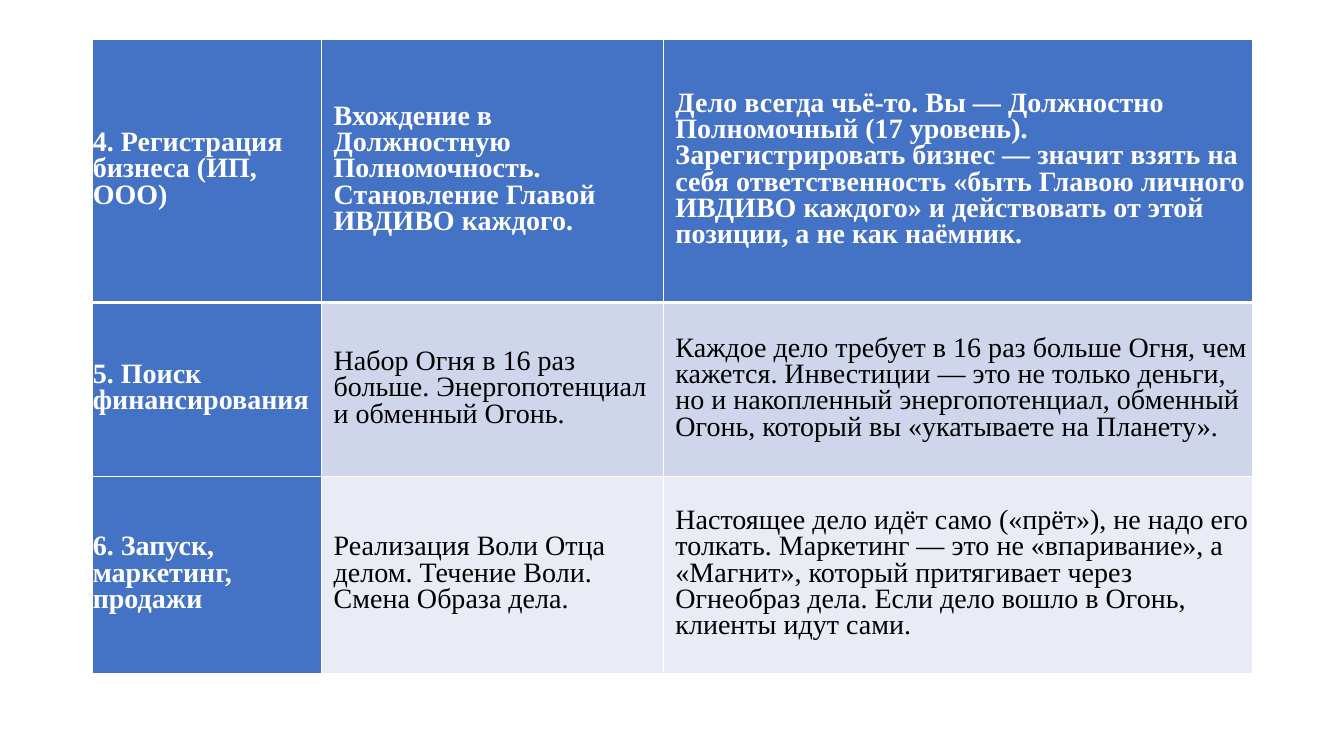
from lxml import etree
from pptx import Presentation
from pptx.dml.color import RGBColor
from pptx.enum.text import MSO_ANCHOR
from pptx.oxml.ns import qn
from pptx.util import Inches, Pt

MIDDLE = MSO_ANCHOR.MIDDLE
BLUE, WHITE, BLACK = "4472C4", "FFFFFF", "000000"
ROW_FILLS = [BLUE, "CFD5EA", "E9EBF5"]
COLUMN_WIDTHS = [2.27, 3.39, 5.84]
ROW_HEIGHTS = [2.61, 1.73, 1.95]

STAGES = [
    ["4. Регистрация бизнеса (ИП, ООО)",
     "Вхождение в Должностную Полномочность. Становление Главой ИВДИВО каждого.",
     "Дело всегда чьё-то. Вы — Должностно Полномочный (17 уровень). "
     "Зарегистрировать бизнес — значит взять на себя ответственность «быть Главою "
     "личного ИВДИВО каждого» и действовать от этой позиции, а не как наёмник."],
    ["5. Поиск финансирования",
     "Набор Огня в 16 раз больше. Энергопотенциал и обменный Огонь.",
     "Каждое дело требует в 16 раз больше Огня, чем кажется. Инвестиции — это не "
     "только деньги, но и накопленный энергопотенциал, обменный Огонь, который вы "
     "«укатываете на Планету»."],
    ["6. Запуск, маркетинг, продажи",
     "Реализация Воли Отца делом. Течение Воли. Смена Образа дела.",
     "Настоящее дело идёт само («прёт»), не надо его толкать. Маркетинг — это не "
     "«впаривание», а «Магнит», который притягивает через Огнеобраз дела. Если дело "
     "вошло в Огонь, клиенты идут сами."],
]


def color(value):
    return RGBColor.from_string(value)


def add_border(cell, side, points):
    line = etree.SubElement(cell._tc.get_or_add_tcPr(), qn(f"a:ln{side}"), w=str(Pt(points)))
    fill = etree.SubElement(line, qn("a:solidFill"))
    etree.SubElement(fill, qn("a:srgbClr"), val=WHITE)


prs = Presentation()
prs.slide_width, prs.slide_height = Inches(13.33), Inches(7.5)
slide = prs.slides.add_slide(prs.slide_layouts[6])

# Table of business stages
stages = slide.shapes.add_table(
    len(ROW_HEIGHTS), len(COLUMN_WIDTHS), Inches(0.92), Inches(0.39),
    Inches(sum(COLUMN_WIDTHS)), Inches(sum(ROW_HEIGHTS))).table
for column, width in zip(stages.columns, COLUMN_WIDTHS):
    column.width = Inches(width)
for row, height in zip(stages.rows, ROW_HEIGHTS):
    row.height = Inches(height)

# Cells: the first row and first column are emphasised
for r, texts in enumerate(STAGES):
    for c, text in enumerate(texts):
        cell = stages.cell(r, c)
        emphasised = r == 0 or c == 0
        cell_format = {
            "vertical_anchor": MIDDLE,
            "margin_left": Inches(0 if c == 0 else 0.12),
            "margin_right": Inches(0 if c == 2 else 0.12),
            "margin_top": Inches(0.07),
            "margin_bottom": Inches(0.07),
        }
        for name, value in cell_format.items():
            setattr(cell, name, value)

        # Thick rule under the first row
        borders = {"L": 1, "R": 1, "T": 3 if r == 1 else 1, "B": 3 if r == 0 else 1}
        for side, points in borders.items():
            add_border(cell, side, points)
        cell.fill.solid()
        cell.fill.fore_color.rgb = color(BLUE if emphasised else ROW_FILLS[r])

        paragraph = cell.text_frame.paragraphs[0]
        paragraph.line_spacing = Pt(18.8)
        run = paragraph.add_run()
        run.text = text
        font_format = {"name": "Times New Roman", "size": Pt(20), "bold": emphasised}
        for name, value in font_format.items():
            setattr(run.font, name, value)
        run.font.color.rgb = color(WHITE if emphasised else BLACK)

prs.save("out.pptx")
